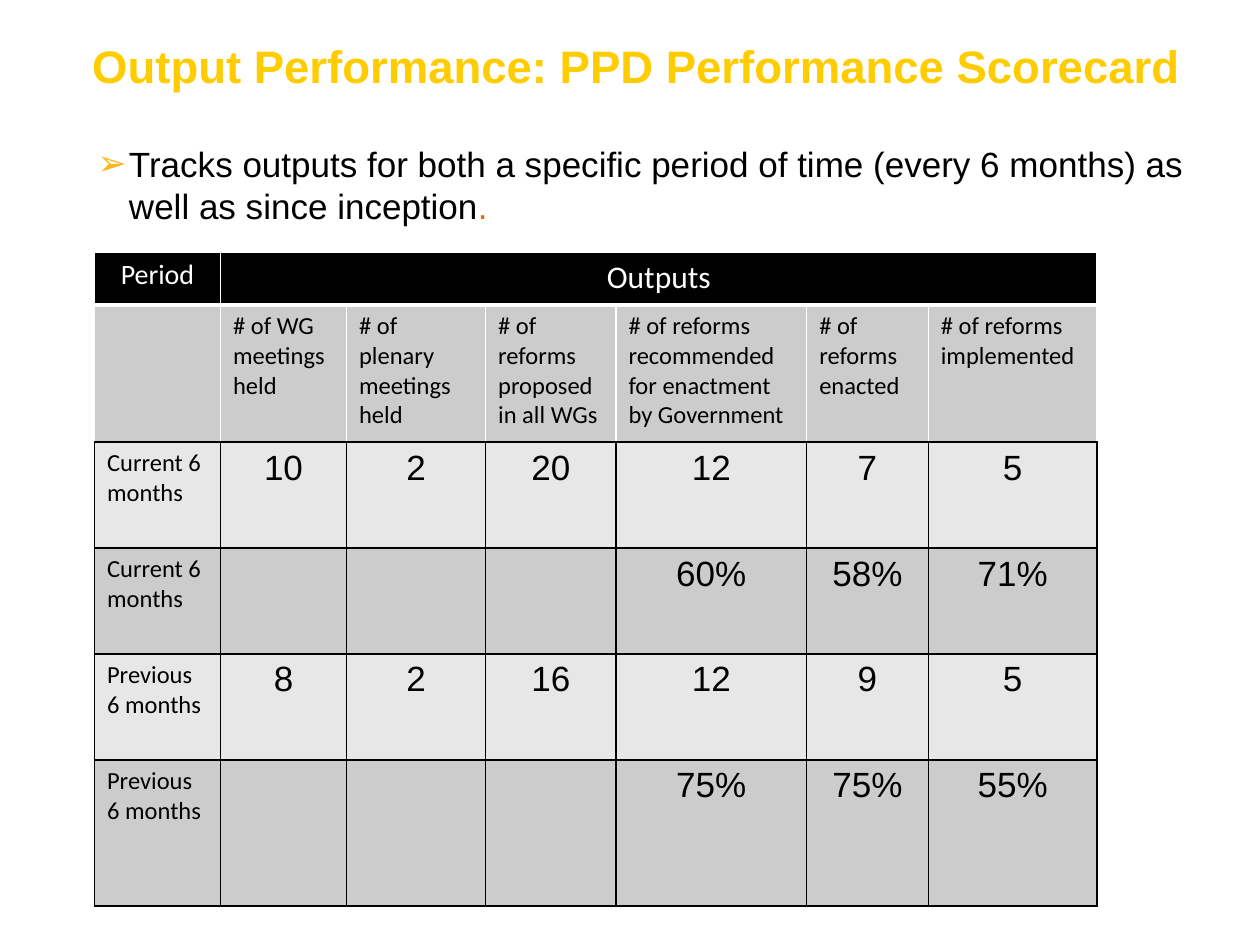
from lxml import etree
from pptx import Presentation
from pptx.dml.color import RGBColor
from pptx.enum.text import MSO_ANCHOR, MSO_AUTO_SIZE, PP_ALIGN
from pptx.oxml.ns import qn
from pptx.util import Pt

LEFT, CENTER = PP_ALIGN.LEFT, PP_ALIGN.CENTER
TOP = MSO_ANCHOR.TOP
NO_FIT = MSO_AUTO_SIZE.NONE

COLUMNS = [72, 72, 79.5, 74.5, 109, 69.5, 96.5]
ROWS = [30.24, 78.5, 60.5, 60.5, 60.5, 83.5]
CELLS = [
    ["Period", "Outputs", "", "", "", "", ""],
    ["", "# of WG meetings held", "# of plenary meetings held",
     "# of reforms proposed in all WGs",
     "# of reforms recommended for enactment by Government",
     "# of reforms enacted", "# of reforms implemented"],
    ["Current 6 months", "10", "2", "20", "12", "7", "5"],
    ["Current 6 months", "", "", "", "60%", "58%", "71%"],
    ["Previous 6 months", "8", "2", "16", "12", "9", "5"],
    ["Previous 6 months", "", "", "", "75%", "75%", "55%"],
]
FILLS = ["000000", "CCCCCC", "E7E7E7", "CCCCCC", "E7E7E7", "CCCCCC"]


def rgb(value):
    """Turn a hex string into a colour."""
    return RGBColor.from_string(value)


def add_run(p, text, size, font, color, bold=False):
    """Append one formatted run to a paragraph."""
    r = p.add_run()
    r.text = text
    r.font.size, r.font.name, r.font.bold = Pt(size), font, bold
    r.font.color.rgb = rgb(color)


def place(sp, box):
    """Move a placeholder to a box and return its text frame."""
    sp.left, sp.top, sp.width, sp.height = [Pt(v) for v in box]
    tf = sp.text_frame
    tf.auto_size, tf.vertical_anchor = NO_FIT, TOP
    return tf


def fill_title(sp, box):
    """Write the slide title."""
    tf = place(sp, box)
    tf.word_wrap = False
    p = tf.paragraphs[0]
    p.alignment = LEFT
    add_run(p, "Output Performance: PPD Performance Scorecard",
            26, "Arial", "FFCC00", True)


def fill_body(sp, box):
    """Write the bulleted introduction."""
    tf = place(sp, box)
    tf.word_wrap = True
    p = tf.paragraphs[0]
    p.space_before = Pt(0)
    add_run(p, "Tracks outputs for both a specific period of time (every 6 months) "
            "as well as since inception", 20, "Arial", "000000")
    add_run(p, ".", 20, "Arial", "E46C0A")
    pPr = p._p.get_or_add_pPr()
    pPr.set("marL", str(Pt(18)))
    pPr.set("indent", str(Pt(-18)))
    color = etree.SubElement(pPr, qn("a:buClr"))
    etree.SubElement(color, qn("a:srgbClr"), val="FEB515")
    etree.SubElement(pPr, qn("a:buFont"), typeface="Arial")
    etree.SubElement(pPr, qn("a:buChar"), char="➢")


def set_border(cell, side, color, width):
    """Draw one side of a cell."""
    tcPr = cell._tc.get_or_add_tcPr()
    ln = etree.SubElement(tcPr, qn(f"a:ln{side}"), w=str(Pt(width)))
    fill = etree.SubElement(ln, qn("a:solidFill"))
    etree.SubElement(fill, qn("a:srgbClr"), val=color)


def fill_cell(cell, row, col, text):
    """Give a cell its borders, fill and text."""
    line = "FFFFFF" if row < 2 else "000000"
    for side in "LRT":
        set_border(cell, side, "000000" if side == "T" and row == 2 else line, 1)
    set_border(cell, "B", "FFFFFF" if row == 0 else "000000", 3 if row == 0 else 1)
    cell.fill.solid()
    cell.fill.fore_color.rgb = rgb(FILLS[row])
    if not text:
        return
    p = cell.text_frame.paragraphs[0]
    if row == 0:
        p.alignment = CENTER
        add_run(p, text, 18 if col else 16, "Calibri", "FFFFFF")
    elif row == 1 or col == 0:
        p.alignment = LEFT
        add_run(p, text, 14, "Calibri", "000000")
    else:
        p.alignment = CENTER
        add_run(p, text, 20, "Arial", "000000")


def add_scorecard(s, left, top):
    """Build the scorecard table from its top left corner."""
    table = s.shapes.add_table(len(ROWS), len(COLUMNS), Pt(left), Pt(top),
                               Pt(sum(COLUMNS)), Pt(sum(ROWS))).table
    for column, width in zip(table.columns, COLUMNS):
        column.width = Pt(width)
    for row, height in zip(table.rows, ROWS):
        row.height = Pt(height)
    table.cell(0, 1).merge(table.cell(0, len(COLUMNS) - 1))
    for i, texts in enumerate(CELLS):
        for j, text in enumerate(texts):
            fill_cell(table.cell(i, j), i, j, text)


def main():
    """Build and save the slide."""
    prs = Presentation()
    prs.slide_width, prs.slide_height = Pt(720), Pt(540)
    s = prs.slides.add_slide(prs.slide_layouts[1])
    fill_title(s.shapes.title, (45.5, 18, 642, 39))
    fill_body(s.placeholders[1], (48.5, 78, 671.5, 55.5))
    add_scorecard(s, 54, 144)
    prs.save("out.pptx")


if __name__ == "__main__":
    main()
